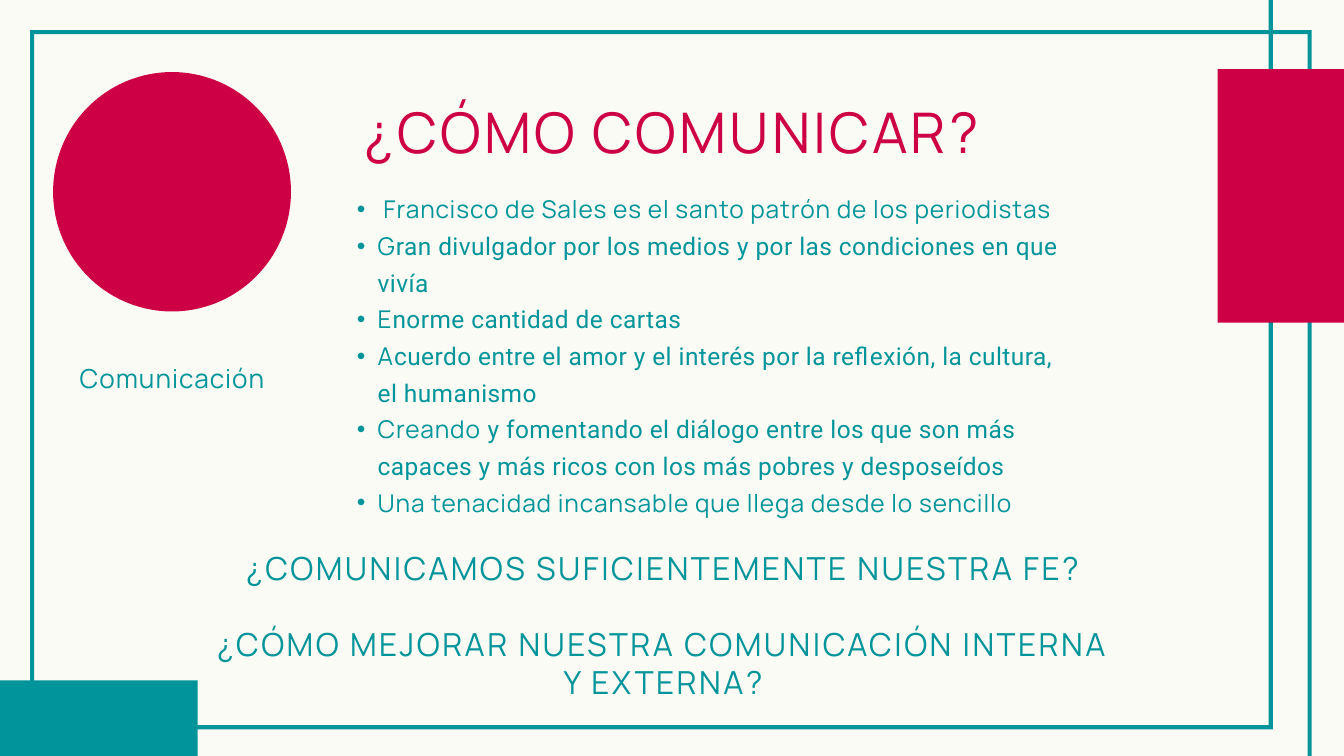
from lxml.etree import SubElement
from pptx import Presentation
from pptx.dml.color import RGBColor
from pptx.enum.shapes import MSO_SHAPE as SHAPE
from pptx.enum.text import MSO_ANCHOR as ANCHOR, MSO_AUTO_SIZE as FIT, PP_ALIGN as ALIGN
from pptx.oxml.ns import qn
from pptx.util import Inches, Pt

TEAL, RED, CREAM = "01949A", "CD0046", "FBFBF5"
COLS, ROWS = 20, 15


def rgb(value):
    return RGBColor.from_string(value)


def add_run(p, text, size=26.2, font="Manrope", color=TEAL, spacing=1):
    """Append a formatted run; spacing is the letter spacing in points."""
    r = p.add_run()
    r.text = text
    r.font.size, r.font.name = Pt(size), font
    r.font.color.rgb = rgb(color)
    r._r.get_or_add_rPr().set("spc", str(round(spacing * 100)))


class Deck:
    """Holds the style and the current slide; boxes are in grid columns and rows."""

    def __init__(self):
        self.prs = Presentation()
        self.prs.slide_width, self.prs.slide_height = Inches(20), Inches(11.25)
        self.col = self.prs.slide_width / COLS
        self.row = self.prs.slide_height / ROWS

    def new_slide(self):
        self.s = self.prs.slides.add_slide(self.prs.slide_layouts[1])
        fill = self.s.background.fill
        fill.solid()
        fill.fore_color.rgb = rgb(CREAM)

    def box(self, x, y, w, h):
        return [round(v * unit) for v, unit in
                zip((x, y, w, h), (self.col, self.row) * 2)]

    def shape(self, kind, box, color):
        sp = self.s.shapes.add_shape(kind, *self.box(*box))
        sp.shadow.inherit = False
        sp.fill.solid()
        sp.fill.fore_color.rgb = rgb(color)
        sp.line.fill.background()
        return sp

    def frame(self, box, thickness=0.06):
        sp = self.shape(SHAPE.FRAME, box, TEAL)
        sp.adjustments[0] = thickness * self.col / min(sp.width, sp.height)

    def prepare(self, sp, box):
        """Place a text holder and clear its margins; return its text frame."""
        sp.left, sp.top, sp.width, sp.height = self.box(*box)
        tf = sp.text_frame
        tf.margin_left = tf.margin_top = tf.margin_right = tf.margin_bottom = 0
        tf.word_wrap, tf.auto_size = True, FIT.NONE
        tf.vertical_anchor = ANCHOR.TOP
        return tf

    def paragraphs(self, tf, count, leading, align, gap=0):
        """Yield evenly spaced paragraphs, with gap points between them."""
        for i in range(count):
            p = tf.add_paragraph() if i else tf.paragraphs[0]
            p.alignment, p.line_spacing = align, Pt(leading)
            p.space_before, p.space_after = Pt(gap if i else 0), Pt(0)
            yield p

    def title(self, text, box):
        tf = self.prepare(self.s.shapes.title, box)
        for p in self.paragraphs(tf, 1, 70.8, ALIGN.CENTER):
            add_run(p, text, size=60, color=RED, spacing=3.5)

    def bullets(self, items, box):
        """Fill the body; each item is a Manrope start and a Roboto remainder."""
        tf = self.prepare(self.s.placeholders[1], box)
        for p, (start, rest) in zip(self.paragraphs(tf, len(items), 39.3, ALIGN.LEFT), items):
            pPr = p._p.get_or_add_pPr()
            pPr.set("marL", str(Inches(0.62)))
            pPr.set("indent", str(Inches(-0.31)))
            SubElement(pPr, qn("a:buFont")).set("typeface", "Arial")
            SubElement(pPr, qn("a:buChar")).set("char", "•")
            add_run(p, start)
            if rest:
                add_run(p, rest, font="Roboto", spacing=0.5)

    def text(self, lines, box, leading, gap=0, **fmt):
        tf = self.prepare(self.s.shapes.add_textbox(0, 0, 0, 0), box)
        for p, line in zip(self.paragraphs(tf, len(lines), leading, ALIGN.CENTER, gap), lines):
            add_run(p, line, **fmt)


POINTS = [
    (" Francisco de Sales es el santo patrón de los periodistas", ""),
    ("G", "ran divulgador por los medios y por las condiciones en que vivía"),
    ("E", "norme cantidad de cartas"),
    ("A", "cuerdo entre el amor y el interés por la reflexión, la cultura, el humanismo"),
    ("Creando", " y fomentando el diálogo entre los que son más capaces y más ricos "
                "con los más pobres y desposeídos"),
    ("Una tenacidad incansable que llega desde lo sencillo", ""),
]
QUESTIONS = [
    "¿COMUNICAMOS SUFICIENTEMENTE NUESTRA FE?",
    "¿CÓMO MEJORAR NUESTRA COMUNICACIÓN INTERNA Y EXTERNA?",
]


def main():
    deck = Deck()
    deck.new_slide()
    deck.frame((0.45, 0.6, 19.07, 15.05))
    deck.frame((-0.76, -1.17, 19.7, 15.64))
    deck.shape(SHAPE.RECTANGLE, (-0.83, 13.5, 3.77, 1.88), TEAL)
    deck.shape(SHAPE.RECTANGLE, (18.12, 1.37, 3.77, 5.03), RED)
    deck.shape(SHAPE.OVAL, (0.79, 1.43, 3.54, 4.75), RED)
    deck.text(["Comunicación"], (0.45, 7.04, 4.22, 0.72), 42, size=28, spacing=1.1)
    deck.title("¿CÓMO COMUNICAR?", (3.97, 1.95, 12.06, 1.32))
    deck.bullets(POINTS, (5, 3.71, 10.92, 6.48))
    deck.text(QUESTIONS, (3.08, 10.88, 13.58, 3.03), 40.8, gap=40.8, size=34, spacing=2.7)
    deck.prs.save("out.pptx")


if __name__ == "__main__":
    main()
